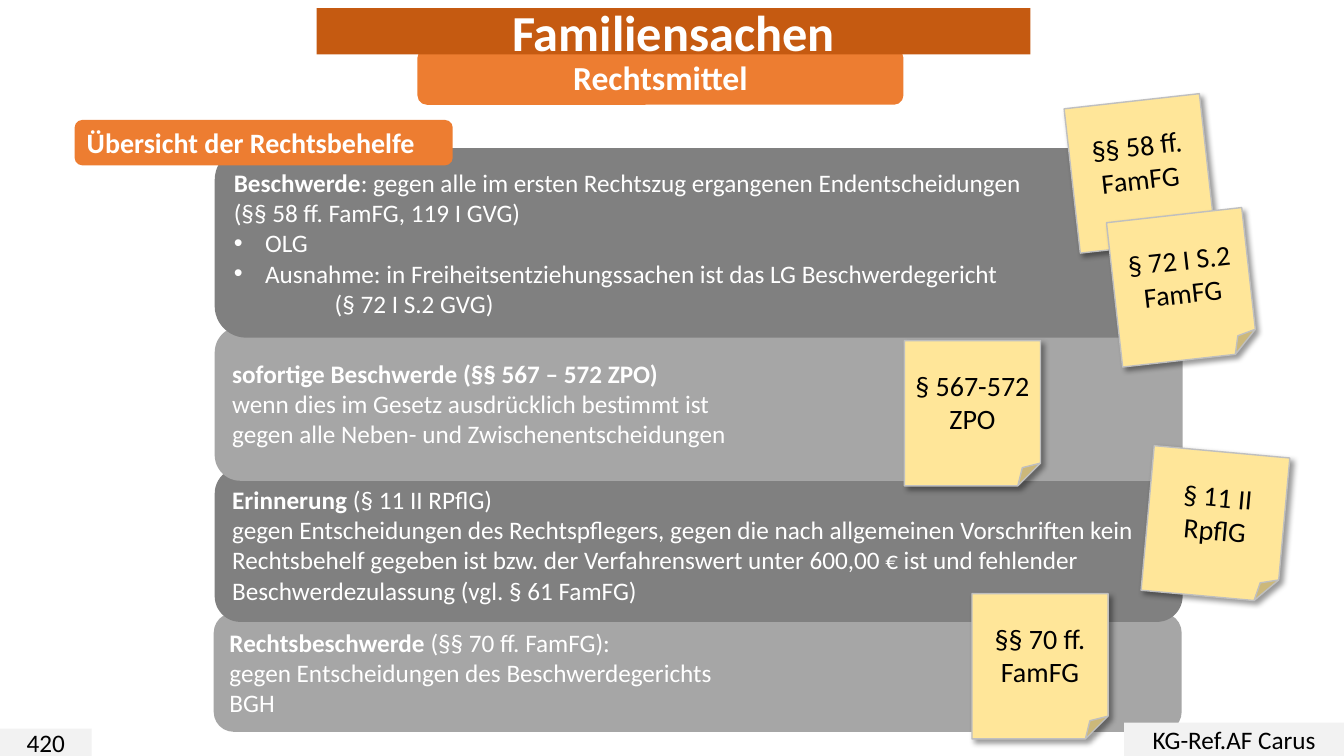
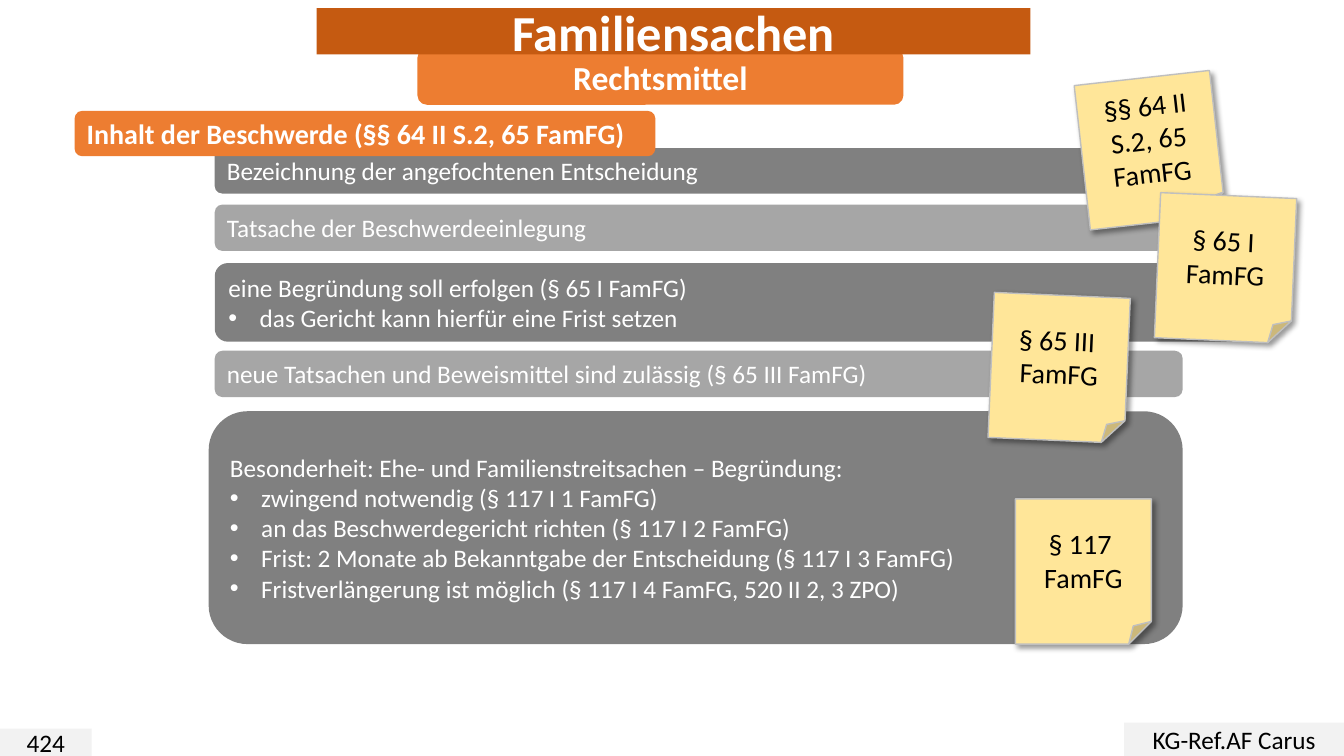
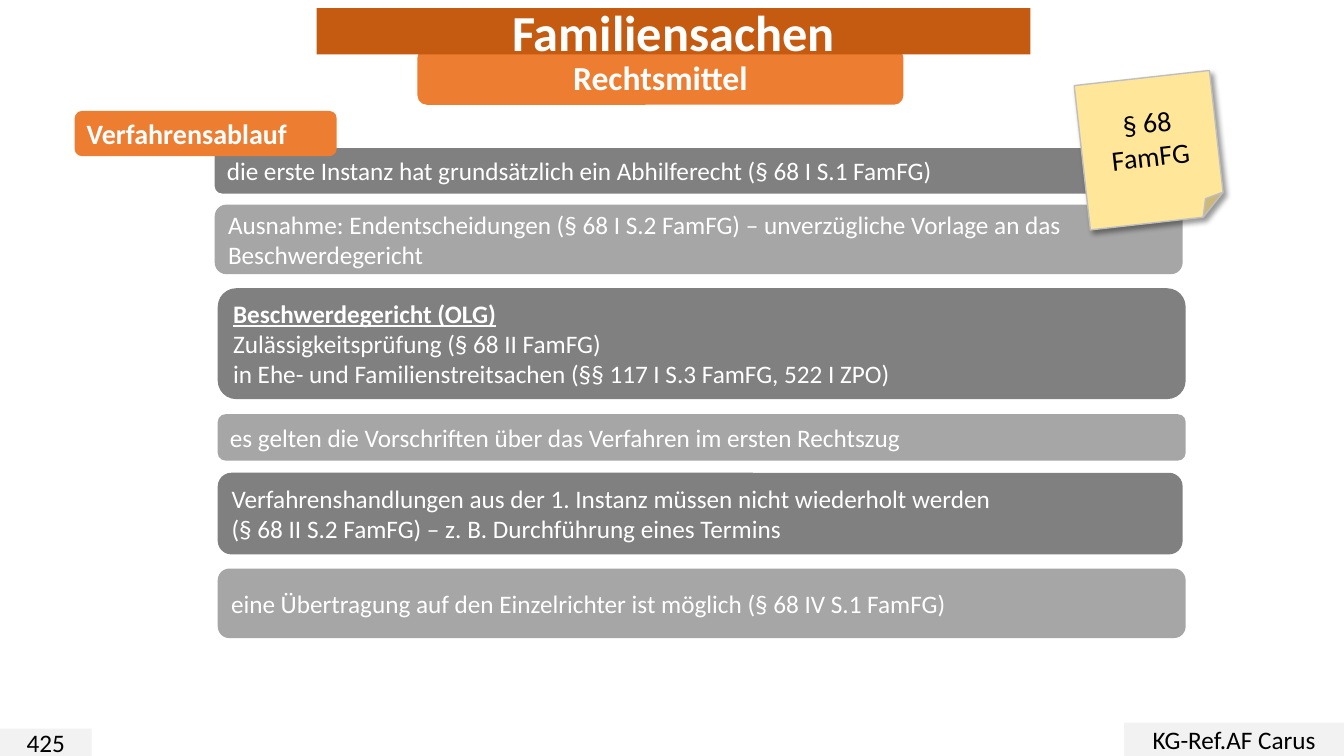
from lxml import etree
from pptx import Presentation
from pptx.dml.color import RGBColor
from pptx.enum.shapes import MSO_SHAPE
from pptx.enum.text import MSO_ANCHOR, MSO_AUTO_SIZE, PP_ALIGN
from pptx.oxml import parse_xml
from pptx.oxml.ns import nsdecls, qn
from pptx.util import Inches, Pt

ROUND, RECT, NOTE = MSO_SHAPE.ROUNDED_RECTANGLE, MSO_SHAPE.RECTANGLE, MSO_SHAPE.FOLDED_CORNER
LEFT, CENTER = PP_ALIGN.LEFT, PP_ALIGN.CENTER
MIDDLE, NO_FIT = MSO_ANCHOR.MIDDLE, MSO_AUTO_SIZE.NONE

WHITE = RGBColor(0xFF, 0xFF, 0xFF)
BLACK = RGBColor(0x00, 0x00, 0x00)
ORANGE = RGBColor(0xED, 0x7D, 0x31)
RUST = RGBColor(0xC5, 0x5A, 0x11)
DARK_GREY = RGBColor(0x80, 0x80, 0x80)
MID_GREY = RGBColor(0xA6, 0xA6, 0xA6)
PALE_GREY = RGBColor(0xF2, 0xF2, 0xF2)
NOTE_YELLOW = RGBColor(0xFF, 0xE6, 0x99)
NOTE_EDGE = RGBColor(0xBF, 0xBF, 0xBF)

# Text formats
FONT = "Calibri"
TITLE = {"size": Pt(36), "bold": True, "color": WHITE}
SUBTITLE = {"size": Pt(24), "bold": True, "color": WHITE}
HEADING = {"size": Pt(20), "bold": True, "color": WHITE}
BODY = {"size": Pt(18), "color": WHITE}
FOOTER = {"size": Pt(18), "color": BLACK}
NOTE_TEXT = {"size": Pt(20), "color": BLACK}
BOLD = {"bold": True}
BOLD_LINE = {"bold": True, "underline": True}

NOTE_SIZE = (1.35, 1.44)
TILT = -6.4
SHADOW = (f'<a:outerShdw {nsdecls("a")} blurRad="{Pt(4)}" dist="{Pt(3)}" dir="2700000" '
          'algn="tl" rotWithShape="0"><a:srgbClr val="000000"><a:alpha val="40000"/>'
          '</a:srgbClr></a:outerShdw>')

# Bars: left, top, width, height, lines; a line is a string or a list of (text, format) runs.
# A leading bullet or tab sets the indent of the line.
# Notes: left, top, rotation, lines
SLIDES = [
    {
        "page": "420", "heading": "Übersicht der Rechtsbehelfe", "heading_box": (0.74, 1.19, 3.75, 0.45),
        "bars": [
            (2.13, 1.47, 9.6, 1.88, [
                [("Beschwerde", BOLD), (": gegen alle im ersten Rechtszug ergangenen Endentscheidungen", {})],
                "(§§ 58 ff. FamFG, 119 I GVG)",
                "•OLG",
                "•Ausnahme: in Freiheitsentziehungssachen ist das LG Beschwerdegericht",
                "\t(§ 72 I S.2 GVG)"]),
            (2.13, 3.24, 9.6, 1.53, [
                [("sofortige Beschwerde (§§ 567 – 572 ZPO)", BOLD)],
                "wenn dies im Gesetz ausdrücklich bestimmt ist",
                "gegen alle Neben- und Zwischenentscheidungen"]),
            (2.13, 4.64, 9.6, 1.53, [
                [("Erinnerung", BOLD), (" (§ 11 II RPflG)", {})],
                "gegen Entscheidungen des Rechtspflegers, gegen die nach allgemeinen Vorschriften kein "
                "Rechtsbehelf gegeben ist bzw. der Verfahrenswert unter 600,00 € ist und fehlender "
                "Beschwerdezulassung (vgl. § 61 FamFG)"]),
            (2.12, 6.08, 9.6, 1.18, [
                [("Rechtsbeschwerde", BOLD), (" (§§ 70 ff. FamFG):", {})],
                "gegen Entscheidungen des Beschwerdegerichts",
                "BGH"]),
        ],
        "notes": [
            (10.63, 1, TILT, ["§§ 58 ff.", "FamFG"]),
            (11.05, 2.13, TILT, ["§ 72 I S.2", "FamFG"]),
            (8.97, 3.38, 0, ["§ 567-572", "ZPO"]),
            (11.38, 4.48, 5.2, ["§ 11 II RpflG"]),
            (9.64, 5.89, 0, ["§§ 70 ff.", "FamFG"]),
        ],
    },
    {
        "page": "424", "heading": "Inhalt der Beschwerde (§§ 64 II S.2, 65 FamFG)",
        "heading_box": (0.74, 1.1, 5.76, 0.45),
        "bars": [
            (2.13, 1.47, 9.6, 0.45, ["Bezeichnung der angefochtenen Entscheidung"]),
            (2.13, 2.03, 9.6, 0.46, ["Tatsache der Beschwerdeeinlegung"]),
            (2.13, 2.61, 10.35, 0.78, [
                "eine Begründung soll erfolgen (§ 65 I FamFG)",
                "•das Gericht kann hierfür eine Frist setzen"]),
            (2.13, 3.48, 9.6, 0.46, ["neue Tatsachen und Beweismittel sind zulässig (§ 65 III FamFG)"]),
            (2.07, 4.08, 9.66, 2.31, [
                "Besonderheit: Ehe- und Familienstreitsachen – Begründung:",
                "•zwingend notwendig (§ 117 I 1 FamFG)",
                "•an das Beschwerdegericht richten (§ 117 I 2 FamFG)",
                "•Frist: 2 Monate ab Bekanntgabe der Entscheidung (§ 117 I 3 FamFG)",
                "•Fristverlängerung ist möglich (§ 117 I 4 FamFG, 520 II 2, 3 ZPO)"]),
        ],
        "notes": [
            (10.73, 0.77, TILT, ["§§ 64 II S.2, 65 FamFG"]),
            (11.48, 1.94, 2.5, ["§ 65 I ", "FamFG"]),
            (9.83, 2.93, 2.5, ["§ 65 III ", "FamFG"]),
            (10.07, 4.95, 0, ["§ 117 ", "FamFG"]),
        ],
    },
    {
        "page": "425", "heading": "Verfahrensablauf", "heading_box": (0.74, 1.1, 2.6, 0.45),
        "bars": [
            (2.13, 1.47, 9.6, 0.45, ["die erste Instanz hat grundsätzlich ein Abhilferecht (§ 68 I S.1 FamFG)"]),
            (2.13, 2.03, 9.6, 0.69, [
                "Ausnahme: Endentscheidungen (§ 68 I S.2 FamFG) – unverzügliche Vorlage an das "
                "Beschwerdegericht"]),
            (2.16, 2.86, 9.6, 1.1, [
                [("Beschwerdegericht (OLG)", BOLD_LINE)],
                "Zulässigkeitsprüfung (§ 68 II FamFG)",
                "in Ehe- und Familienstreitsachen (§§ 117 I S.3 FamFG, 522 I ZPO)"]),
            (2.16, 4.11, 9.6, 0.46, ["es gelten die Vorschriften über das Verfahren im ersten Rechtszug"]),
            (2.16, 4.69, 9.57, 0.81, [
                "Verfahrenshandlungen aus der 1. Instanz müssen nicht wiederholt werden",
                "(§ 68 II S.2 FamFG) – z. B. Durchführung eines Termins"]),
            (2.16, 5.64, 9.6, 0.69, ["eine Übertragung auf den Einzelrichter ist möglich (§ 68 IV S.1 FamFG)"]),
        ],
        "notes": [(10.73, 0.77, TILT, ["§ 68 FamFG"])],
    },
]


def write(sp, lines, style, align):
    tf = sp.text_frame
    for name, value in {"word_wrap": True, "auto_size": NO_FIT, "vertical_anchor": MIDDLE}.items():
        setattr(tf, name, value)
    for i, line in enumerate(lines):
        p = tf.add_paragraph() if i else tf.paragraphs[0]
        p.alignment = align
        pPr = p._p.get_or_add_pPr()
        runs = line
        if isinstance(line, str):
            runs = [(line.lstrip("•\t"), {})]
            if line.startswith("•"):
                pPr.set("marL", str(Inches(0.31)))
                pPr.set("indent", str(-Inches(0.31)))
                etree.SubElement(pPr, qn("a:buFont")).set("typeface", "Arial")
                etree.SubElement(pPr, qn("a:buChar")).set("char", "•")
            elif line.startswith("\t"):
                pPr.set("marL", str(Inches(1)))
        for text, extra in runs:
            r = p.add_run()
            r.text = text
            for name, value in {"name": FONT, **style, **extra}.items():
                if name == "color":
                    r.font.color.rgb = value
                else:
                    setattr(r.font, name, value)


def add_box(s, preset, box, fill, lines, style, align):
    sp = s.shapes.add_shape(preset, *[Inches(v) for v in box])
    sp.fill.solid()
    sp.fill.fore_color.rgb = fill
    sp.line.fill.background()
    sp.shadow.inherit = False
    write(sp, lines, style, align)
    return sp


prs = Presentation()
prs.slide_width, prs.slide_height = Inches(13.33), Inches(7.5)

for content in SLIDES:
    s = prs.slides.add_slide(prs.slide_layouts[5])

    # Grey bars, lowest first so that each overlaps the next one down
    for i, (*box, lines) in reversed(list(enumerate(content["bars"]))):
        add_box(s, ROUND, box, MID_GREY if i % 2 else DARK_GREY, lines, BODY, LEFT)

    # Subtitle band and the title on top of it
    add_box(s, ROUND, (4.14, 0.48, 4.82, 0.56), ORANGE, ["Rechtsmittel"], SUBTITLE, CENTER)
    title = s.shapes.title
    for name, value in {"left": 3.14, "top": 0.08, "width": 7.08, "height": 0.46}.items():
        setattr(title, name, Inches(value))
    title.element.spPr.append(parse_xml(f'<a:prstGeom {nsdecls("a")} prst="roundRect"><a:avLst/></a:prstGeom>'))
    title.fill.solid()
    title.fill.fore_color.rgb = RUST
    write(title, ["Familiensachen"], TITLE, CENTER)
    s.shapes._spTree.append(title.element)

    # Footer and heading
    add_box(s, RECT, (0, 7.23, 0.91, 0.27), PALE_GREY, [content["page"]], FOOTER, CENTER)
    add_box(s, RECT, (11.15, 7.17, 2.18, 0.33), PALE_GREY, ["KG-Ref.AF Carus"], FOOTER, CENTER)
    add_box(s, ROUND, content["heading_box"], ORANGE, [content["heading"]], HEADING, LEFT)

    # Sticky notes
    for left, top, rotation, lines in content["notes"]:
        sp = add_box(s, NOTE, (left, top, *NOTE_SIZE), NOTE_YELLOW, lines, NOTE_TEXT, CENTER)
        sp.rotation = rotation
        sp.line.color.rgb = NOTE_EDGE
        sp.line.width = Pt(1)
        sp.element.spPr.find(qn("a:effectLst")).append(parse_xml(SHADOW))

prs.save("out.pptx")
